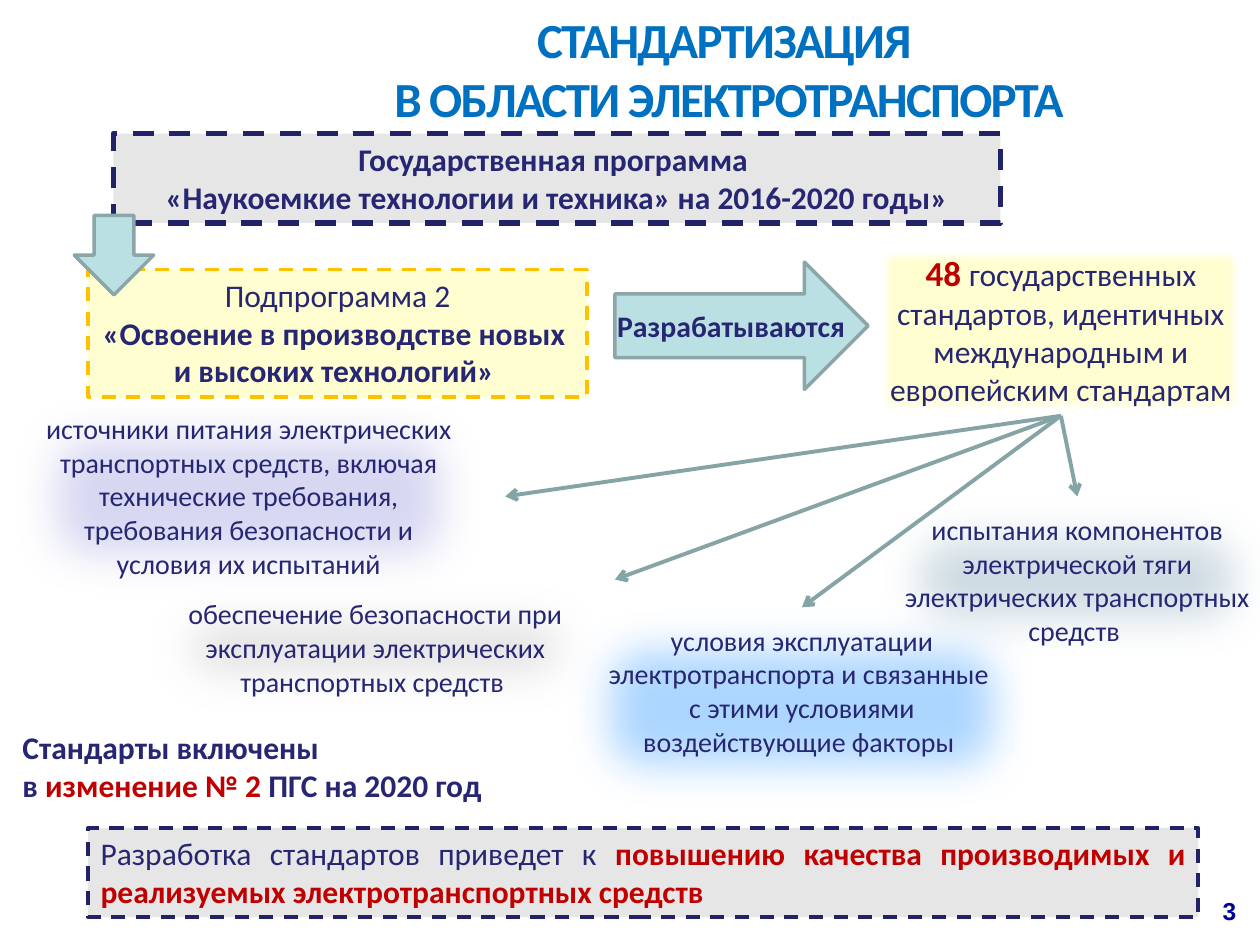
import pptx
import pptx.util
import pptx.dml.color
import pptx.enum.dml
import pptx.enum.shapes
import pptx.enum.text
import pptx.oxml.ns
from lxml import etree

Inches = pptx.util.Inches
SHAPE = pptx.enum.shapes.MSO_SHAPE
ALIGN = pptx.enum.text.PP_ALIGN
ANCHOR = pptx.enum.text.MSO_ANCHOR

COLORS = {
    "title": "0070C0", "text": "262673", "accent": "C00000", "number": "000099",
    "gray": "E6E6E6", "navy": "222267", "yellow": "FFFED1", "gold": "FFC000",
    "arrow": "BBE0E3", "arrow_line": "8AA6A8", "connector": "86A4A6",
    "silver": "D9D9D9", "lilac": "CECEEF", "steel": "C2D2DC", "sky": "99CCFF",
}


def rgb(name):
    return pptx.dml.color.RGBColor.from_string(COLORS[name])


def add_xml(parent, tag, **attrs):
    return etree.SubElement(parent, pptx.oxml.ns.qn(tag), attrs)


def write(sp, runs, align=ALIGN.CENTER, anchor=ANCHOR.TOP, inset=0.1):
    tf = sp.text_frame
    tf.word_wrap = True
    tf.vertical_anchor = anchor
    tf.margin_left = tf.margin_right = Inches(inset)
    p = tf.paragraphs[0]
    p.alignment = align
    for text, size, color, bold in runs:
        for i, line in enumerate(text.split("\n")):
            if i:
                p.add_line_break()
            if line:
                r = p.add_run()
                r.text = line
                r.font.name = "Calibri"
                r.font.size = pptx.util.Pt(size)
                r.font.bold = bold
                r.font.color.rgb = rgb(color)
    return p


def add_text(s, box, runs, **options):
    sp = s.shapes.add_textbox(*map(Inches, box))
    return write(sp, runs, **options)


def add_box(s, box, fill, line=None, width=2, dash=True, kind=SHAPE.RECTANGLE):
    sp = s.shapes.add_shape(kind, *map(Inches, box))
    sp.shadow.inherit = False
    sp.fill.solid()
    sp.fill.fore_color.rgb = rgb(fill)
    if line:
        sp.line.color.rgb = rgb(line)
        sp.line.width = pptx.util.Pt(width)
        if dash:
            sp.line.dash_style = pptx.enum.dml.MSO_LINE.DASH
    else:
        sp.line.fill.background()
    return sp


def soften(sp, radius):
    effects = sp._element.spPr.find(pptx.oxml.ns.qn("a:effectLst"))
    add_xml(effects, "a:softEdge", rad=str(Inches(radius)))


def add_title(s, box):
    runs = [("СТАНДАРТИЗАЦИЯ \nВ ОБЛАСТИ ЭЛЕКТРОТРАНСПОРТА", 28, "title", True)]
    p = add_text(s, box, runs, anchor=ANCHOR.MIDDLE)
    for r in p.runs:
        r.font._element.set("spc", "-100")


def add_program(s, box):
    sp = add_box(s, box, "gray", "navy", 3)
    write(sp, [("Государственная программа \n«Наукоемкие технологии и техника» на 2016-2020 годы»",
                18, "text", True)])


def add_subprogram(s, box):
    sp = add_box(s, box, "yellow", "gold")
    write(sp, [("Подпрограмма 2\n", 18, "text", False),
               ("«Освоение в производстве новых \nи высоких технологий» ", 18, "text", True)])


def add_block_arrow(s, box, rotation=0):
    sp = add_box(s, box, "arrow", "arrow_line", dash=False, kind=SHAPE.DOWN_ARROW)
    sp.rotation = rotation


def add_standards(s, box):
    sp = add_box(s, box, "yellow")
    soften(sp, 0.07)
    write(sp, [("48 ", 20, "accent", True),
               ("государственных стандартов, идентичных международным и европейским стандартам",
                18, "text", False)], inset=0.08)
    return sp


def add_topic(s, box, fill, text):
    sp = add_box(s, box, fill, kind=SHAPE.ROUNDED_RECTANGLE)
    sp.adjustments[0] = 0.27 / min(box[2:])
    sp.fill._xPr.find(pptx.oxml.ns.qn("a:solidFill"))[0].append(
        etree.Element(pptx.oxml.ns.qn("a:alpha"), val="80000"))
    soften(sp, 0.35)
    write(sp, [(text, 16, "text", False)])
    return sp


def add_ray(s, source, end, target=None):
    x, y = map(Inches, end)
    c = s.shapes.add_connector(pptx.enum.shapes.MSO_CONNECTOR.STRAIGHT, x, y, x, y)
    c.begin_connect(source, 2)
    if target is not None:
        c.end_connect(target, 0)
    c.line.color.rgb = rgb("connector")
    c.line.width = pptx.util.Pt(2.25)
    add_xml(c.line._get_or_add_ln(), "a:tailEnd", type="arrow")
    add_xml(c._element.spPr, "a:effectLst")


def add_included(s, box):
    add_text(s, box, [("Стандарты включены \nв ", 18, "text", True),
                      ("изменение № 2", 18, "accent", True),
                      (" ПГС на 2020 год", 18, "text", True)], align=ALIGN.LEFT)


def add_conclusion(s, box):
    sp = add_box(s, box, "gray", "navy")
    write(sp, [("Разработка стандартов приведет к ", 18, "text", False),
               ("повышению качества производимых и реализуемых электротранспортных средств",
                18, "accent", True)], align=ALIGN.JUSTIFY)


def add_number(s, box):
    p = add_text(s, box, [("3", 14, "number", True)], align=ALIGN.RIGHT)
    p.runs[0].font.name = "Arial"


def main():
    prs = pptx.Presentation()
    prs.slide_width, prs.slide_height = Inches(10), Inches(7.5)
    s = prs.slides.add_slide(prs.slide_layouts[6])

    add_number(s, (9.31, 7.06, 0.6, 0.33))
    add_title(s, (1.57, 0.02, 8.43, 1.04))
    add_program(s, (0.9, 1.06, 7.04, 0.71))
    add_subprogram(s, (0.7, 2.14, 3.96, 1.01))
    add_block_arrow(s, (0.59, 1.71, 0.63, 0.63))
    add_block_arrow(s, (5.38, 1.58, 1.01, 2.01), 270)
    add_text(s, (4.8, 2.39, 2.03, 0.39), [("Разрабатываются", 17, "text", True)],
             align=ALIGN.LEFT)
    standards = add_standards(s, (6.96, 1.95, 2.92, 1.35))

    add_topic(s, (1.15, 4.61, 3.66, 1.06), "silver",
              "обеспечение безопасности при эксплуатации электрических транспортных средств ")
    add_topic(s, (0.11, 3.14, 3.73, 1.6), "lilac",
              "источники питания электрических транспортных средств, включая технические "
              "требования, требования безопасности и условия их испытаний")
    tests = add_topic(s, (6.96, 3.94, 3.18, 1.3), "steel",
                      "испытания компонентов электрической тяги электрических "
                      "транспортных средств ")
    conditions = add_topic(s, (4.5, 4.82, 3.73, 1.6), "sky",
                           "условия эксплуатации электротранспорта и связанные \n"
                           "с этими условиями воздействующие факторы ")
    add_ray(s, standards, (4.01, 3.94))
    add_ray(s, standards, (4.88, 4.6))
    add_ray(s, standards, (8.55, 3.94), tests)
    add_ray(s, standards, (6.37, 4.82), conditions)

    add_included(s, (0.08, 5.73, 4.42, 0.71))
    add_conclusion(s, (0.7, 6.57, 8.81, 0.71))
    prs.save("out.pptx")


if __name__ == "__main__":
    main()
